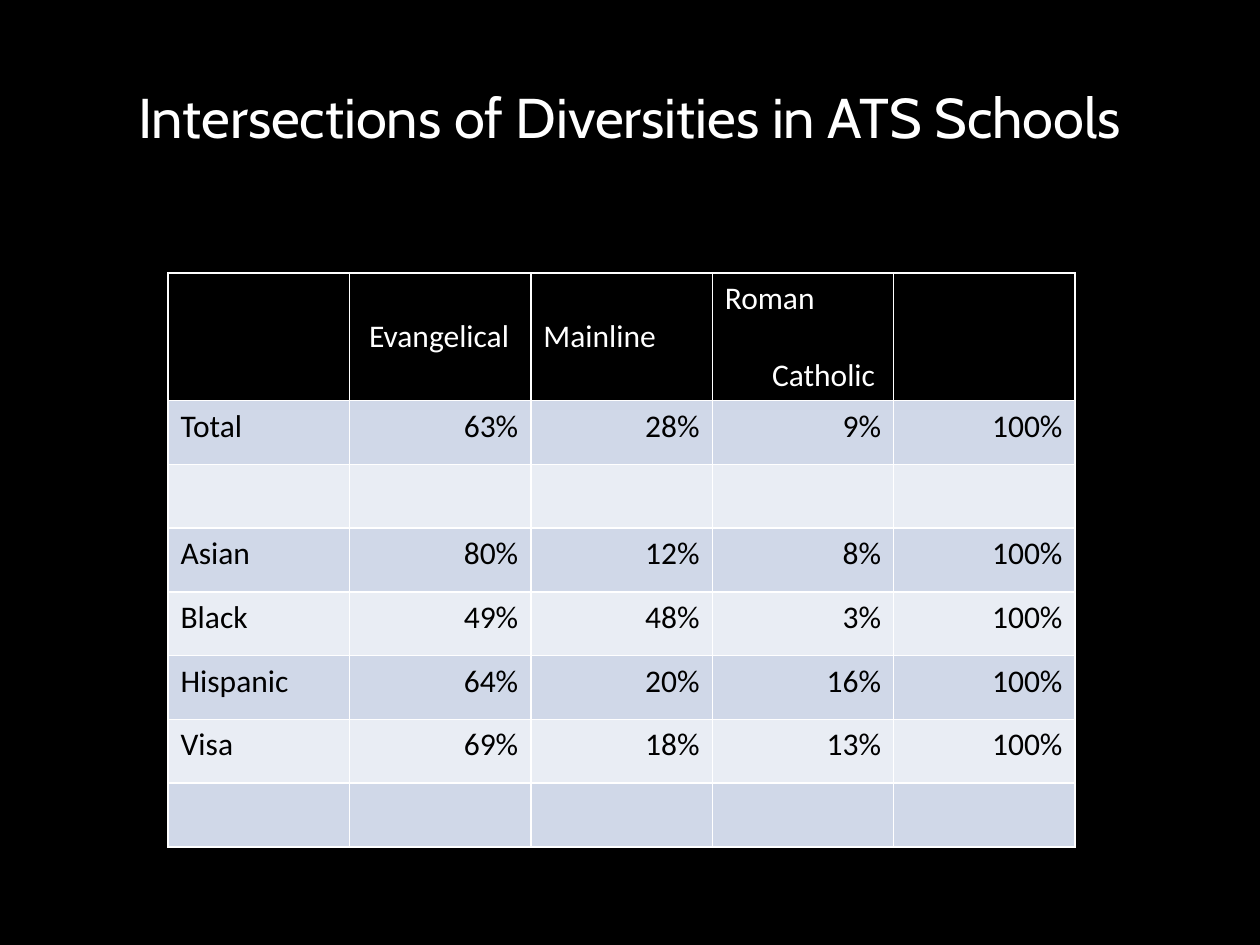
from dataclasses import dataclass
from lxml import etree
from pptx import Presentation
from pptx.dml.color import RGBColor
from pptx.enum.text import MSO_ANCHOR, PP_ALIGN
from pptx.oxml.ns import qn
from pptx.util import Pt

LEFT, CENTER, RIGHT = PP_ALIGN.LEFT, PP_ALIGN.CENTER, PP_ALIGN.RIGHT
MIDDLE, TOP = MSO_ANCHOR.MIDDLE, MSO_ANCHOR.TOP


@dataclass(frozen=True)
class Theme:
    background: RGBColor = RGBColor(0, 0, 0)
    light: RGBColor = RGBColor(255, 255, 255)
    dark: RGBColor = RGBColor(0, 0, 0)
    bands: tuple = (RGBColor(0xD0, 0xD8, 0xE8), RGBColor(0xE9, 0xED, 0xF4))
    title_font: str = "Cabin"
    body_font: str = "Calibri"
    title_size: int = 32
    body_size: int = 18


THEME = Theme()
TITLE = "Intersections of Diversities in ATS Schools"
HEADER = ["", "Evangelical", "Mainline", "Roman\nCatholic", ""]
HEADER_INDENTS = {"Evangelical": 4, "Catholic": 27}
LINE_GAP = 22
HEADER_HEIGHT = 73
ROWS = [
    ["Total", "63%", "28%", "9%", "100%"],
    [""] * 5,
    ["Asian", "80%", "12%", "8%", "100%"],
    ["Black", "49%", "48%", "3%", "100%"],
    ["Hispanic", "64%", "20%", "16%", "100%"],
    ["Visa", "69%", "18%", "13%", "100%"],
    [""] * 5,
]


def style_paragraph(p, font, size, color, align):
    p.alignment = align
    p.font.name = font
    p.font.size = Pt(size)
    p.font.bold = False
    p.font.color.rgb = color


def add_title(s, x, y, w, h):
    tf = s.shapes.add_textbox(Pt(x), Pt(y), Pt(w), Pt(h)).text_frame
    tf.word_wrap = True
    tf.vertical_anchor = MIDDLE
    tf.text = TITLE
    style_paragraph(tf.paragraphs[0], THEME.title_font, THEME.title_size, THEME.light, CENTER)


def set_borders(cell):
    tcPr = cell._tc.get_or_add_tcPr()
    for side in ("lnL", "lnR", "lnT", "lnB"):
        ln = etree.SubElement(tcPr, qn(f"a:{side}"), w=str(Pt(1)))
        fill = etree.SubElement(ln, qn("a:solidFill"))
        etree.SubElement(fill, qn("a:srgbClr"), val=str(THEME.light))


def fill_cell(cell, text, color, align, anchor):
    set_borders(cell)
    cell.vertical_anchor = anchor
    cell.text = text
    for p in cell.text_frame.paragraphs:
        style_paragraph(p, THEME.body_font, THEME.body_size, color, align)


def fill_header(cell, text):
    fill_cell(cell, text, THEME.light, LEFT, MIDDLE)
    cell.fill.background()
    for i, p in enumerate(cell.text_frame.paragraphs):
        if i:
            p.space_before = Pt(LINE_GAP)
        if p.text in HEADER_INDENTS:
            p._p.get_or_add_pPr().set("marL", str(Pt(HEADER_INDENTS[p.text])))


def add_diversity_table(s, x, y, w, h):
    table = s.shapes.add_table(
        len(ROWS) + 1, len(HEADER), Pt(x), Pt(y), Pt(w), Pt(h)
    ).table
    for col in table.columns:
        col.width = Pt(w / len(HEADER))
    for i, row in enumerate(table.rows):
        row.height = Pt((h - HEADER_HEIGHT) / len(ROWS) if i else HEADER_HEIGHT)
    for c, text in enumerate(HEADER):
        fill_header(table.cell(0, c), text)
    for r, values in enumerate(ROWS):
        for c, text in enumerate(values):
            cell = table.cell(r + 1, c)
            fill_cell(cell, text, THEME.dark, RIGHT if c else LEFT, TOP)
            cell.fill.solid()
            cell.fill.fore_color.rgb = THEME.bands[r % 2]


def main():
    prs = Presentation()
    prs.slide_width, prs.slide_height = Pt(720), Pt(540)
    s = prs.slides.add_slide(prs.slide_layouts[6])
    s.background.fill.solid()
    s.background.fill.fore_color.rgb = THEME.background
    add_title(s, 36, 21.6, 648, 90)
    add_diversity_table(s, 96, 156, 518.4, 328)
    prs.save("out.pptx")


if __name__ == "__main__":
    main()
